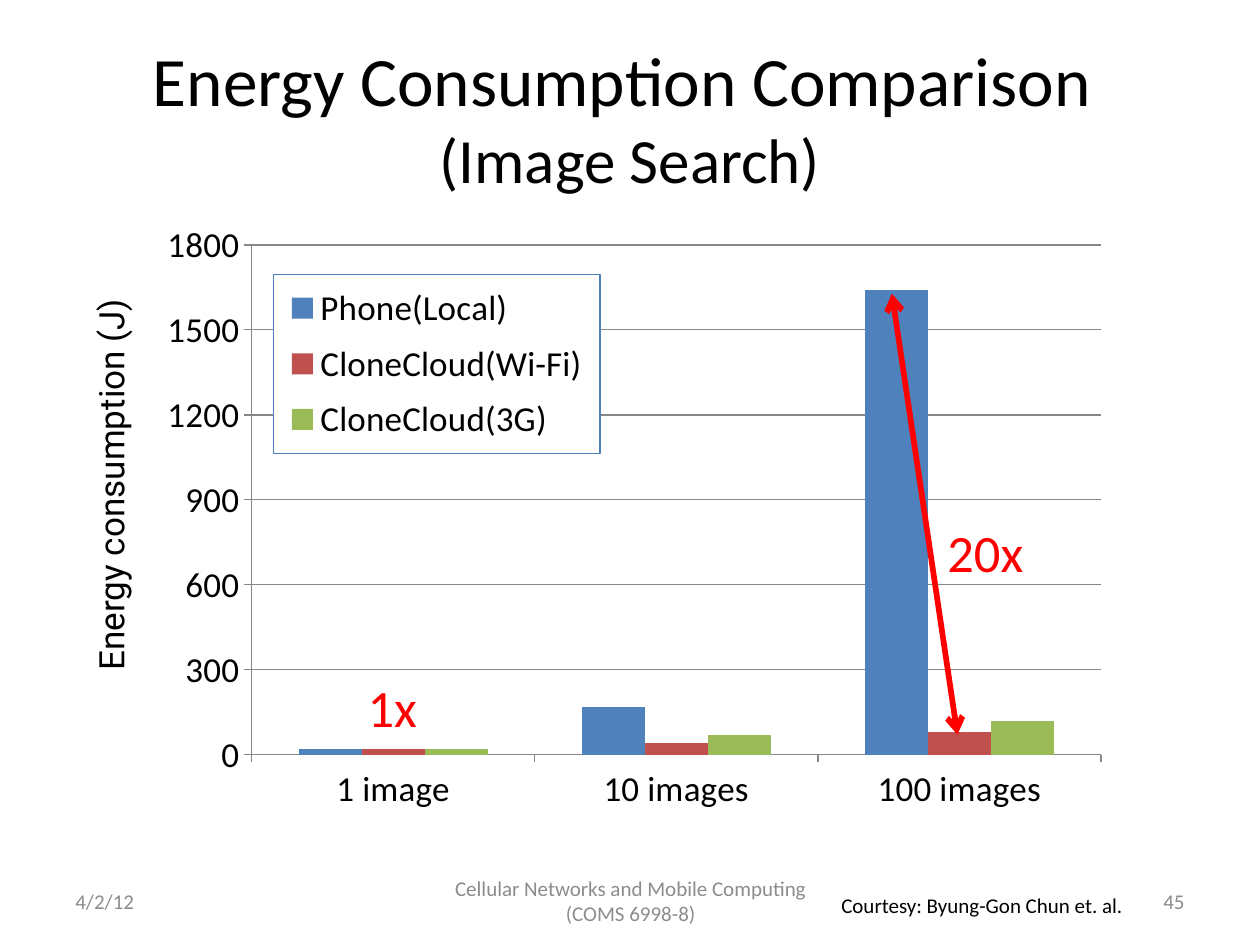
"""Build the energy consumption comparison slide."""
from dataclasses import dataclass

from lxml import etree
from pptx import Presentation
from pptx.chart.data import CategoryChartData
from pptx.dml.color import RGBColor
from pptx.enum.chart import XL_CHART_TYPE, XL_LEGEND_POSITION, XL_TICK_MARK
from pptx.enum.shapes import MSO_CONNECTOR
from pptx.enum.text import MSO_ANCHOR, MSO_AUTO_SIZE, PP_ALIGN
from pptx.oxml import parse_xml
from pptx.oxml.ns import nsdecls, qn
from pptx.util import Cm, Pt

COLUMNS = XL_CHART_TYPE.COLUMN_CLUSTERED
LEGEND_RIGHT = XL_LEGEND_POSITION.RIGHT
TICK_OUT = XL_TICK_MARK.OUTSIDE
STRAIGHT = MSO_CONNECTOR.STRAIGHT
TOP, MIDDLE = MSO_ANCHOR.TOP, MSO_ANCHOR.MIDDLE
NO_AUTOFIT = MSO_AUTO_SIZE.NONE
LEFT, CENTER, RIGHT = PP_ALIGN.LEFT, PP_ALIGN.CENTER, PP_ALIGN.RIGHT


@dataclass(frozen=True)
class Theme:
    body: str = "Calibri"
    label: str = "Roboto"
    ink: str = "000000"
    muted: str = "8C8C8C"
    accent: str = "FF0000"
    grid: str = "868686"
    paper: str = "FFFFFF"
    series: tuple = ("4F81BD", "C0504D", "9BBB59")
    title_size: float = 39.6
    subtitle_size: float = 36
    callout_size: float = 30
    chart_size: float = 20
    footer_size: float = 12
    arrow_width: float = 3.25


class SlideBuilder:
    def __init__(self, slide, theme):
        self.slide = slide
        self.theme = theme

    def style(self, font, size, color, face=None):
        font.name = face or self.theme.body
        font.size = Pt(size)
        font.color.rgb = RGBColor.from_string(color)

    def text(self, box, content, size, color, align=LEFT, anchor=TOP,
             face=None, wrap=True, rotation=0):
        shape = self.slide.shapes.add_textbox(*map(Cm, box))
        shape.rotation = rotation
        frame = shape.text_frame
        frame.auto_size = NO_AUTOFIT
        frame.word_wrap = wrap
        frame.vertical_anchor = anchor
        paragraph = frame.paragraphs[0]
        paragraph.text = content
        paragraph.alignment = align
        self.style(paragraph.font, size, color, face)
        return paragraph

    def title(self, box, heading, subheading):
        theme = self.theme
        paragraph = self.text(box, heading, theme.title_size, theme.ink, CENTER, MIDDLE)
        paragraph.add_line_break()
        subtitle = paragraph.add_run()
        subtitle.text = subheading
        subtitle.font.size = Pt(theme.subtitle_size)

    def footer(self, left, width, content, align):
        self.text((left, 17.65, width, 1.02), content, self.theme.footer_size,
                  self.theme.muted, align, MIDDLE)

    def callout(self, box, content):
        self.text(box, content, self.theme.callout_size, self.theme.accent, wrap=False)

    def double_arrow(self, start, end):
        arrow = self.slide.shapes.add_connector(STRAIGHT, *map(Cm, start + end))
        arrow.line.color.rgb = RGBColor.from_string(self.theme.accent)
        arrow.line.width = Pt(self.theme.arrow_width)
        properties = arrow._element.spPr
        for tip in ("a:headEnd", "a:tailEnd"):
            etree.SubElement(properties.find(qn("a:ln")), qn(tip), type="arrow")
        etree.SubElement(properties, qn("a:effectLst"))

    def place(self, parent, index, x, y, w, h, inner=False):
        for old in parent.findall(qn("c:layout")):
            parent.remove(old)
        target = '<c:layoutTarget val="inner"/>' if inner else ""
        parent.insert(index, parse_xml(
            f'<c:layout {nsdecls("c")}><c:manualLayout>{target}'
            '<c:xMode val="edge"/><c:yMode val="edge"/>'
            f'<c:x val="{x}"/><c:y val="{y}"/><c:w val="{w}"/><c:h val="{h}"/>'
            '</c:manualLayout></c:layout>'))

    def legend(self, chart, area):
        theme = self.theme
        chart.has_legend = True
        legend = chart.legend
        legend.position = LEGEND_RIGHT
        legend.include_in_layout = False
        self.style(legend.font, theme.chart_size, theme.ink)
        element = legend._element
        self.place(element, 1, *area)
        element.find(qn("c:txPr")).addprevious(parse_xml(
            f'<c:spPr {nsdecls("c", "a")}>'
            f'<a:solidFill><a:srgbClr val="{theme.paper}"/></a:solidFill>'
            f'<a:ln w="9525"><a:solidFill><a:srgbClr val="{theme.series[0]}"/>'
            '</a:solidFill></a:ln></c:spPr>'))

    def column_chart(self, box, categories, series, maximum, step, plot_area, legend_area):
        theme = self.theme
        data = CategoryChartData()
        data.categories = categories
        for name, values in series.items():
            data.add_series(name, values)
        chart = self.slide.shapes.add_chart(COLUMNS, *map(Cm, box), data).chart
        chart.has_title = False
        self.style(chart.font, theme.chart_size, theme.ink)
        plot = chart.plots[0]
        plot.gap_width = 150
        plot.overlap = 0
        plot.vary_by_categories = False
        for columns, color in zip(plot.series, theme.series):
            columns.format.fill.solid()
            columns.format.fill.fore_color.rgb = RGBColor.from_string(color)
        energy_axis = chart.value_axis
        energy_axis.minimum_scale = 0
        energy_axis.maximum_scale = maximum
        energy_axis.major_unit = step
        energy_axis.has_major_gridlines = True
        lines = [energy_axis.major_gridlines.format.line]
        for axis in (chart.category_axis, energy_axis):
            axis.major_tick_mark = TICK_OUT
            self.style(axis.tick_labels.font, theme.chart_size, theme.ink)
            lines.append(axis.format.line)
        for line in lines:
            line.color.rgb = RGBColor.from_string(theme.grid)
            line.width = Pt(0.75)
        self.place(chart._chartSpace.chart.plotArea, 0, *plot_area, inner=True)
        self.legend(chart, legend_area)


def main():
    theme = Theme()
    deck = Presentation()
    deck.slide_width, deck.slide_height = Cm(25.4), Cm(19.05)
    page = SlideBuilder(deck.slides.add_slide(deck.slide_layouts[6]), theme)

    page.title((1.27, 0.76, 22.86, 3.18), "Energy Consumption Comparison ", "(Image Search)")
    page.text((-1.78, 9.19, 8.03, 1.12), "Energy consumption (J)", theme.chart_size,
              theme.ink, face=theme.label, wrap=False, rotation=270)
    page.column_chart(
        (2.74, 4.24, 20.12, 12.9),
        ("1 image", "10 images", "100 images"),
        {
            "Phone(Local)": (20, 170, 1640),
            "CloneCloud(Wi-Fi)": (20, 40, 80),
            "CloneCloud(3G)": (20, 70, 120),
        },
        maximum=1800, step=300,
        plot_area=(0.116, 0.054, 0.851, 0.797),
        legend_area=(0.138, 0.1, 0.327, 0.28),
    )
    page.double_arrow((17.98, 5.92), (19.3, 14.81))
    page.callout((18.85, 10.36, 2.06, 1.55), "20x")
    page.callout((7.16, 13.49, 1.52, 1.55), "1x")

    page.footer(1.27, 5.92, "4/2/12", LEFT)
    page.footer(8.69, 8.05, "Cellular Networks and Mobile Computing (COMS 6998-8)", CENTER)
    page.footer(18.21, 5.92, "45", RIGHT)
    page.text((16.71, 17.86, 6.25, 0.76), "Courtesy: Byung-Gon Chun et. al.",
              theme.footer_size, theme.ink, wrap=False)
    deck.save("out.pptx")


if __name__ == "__main__":
    main()
